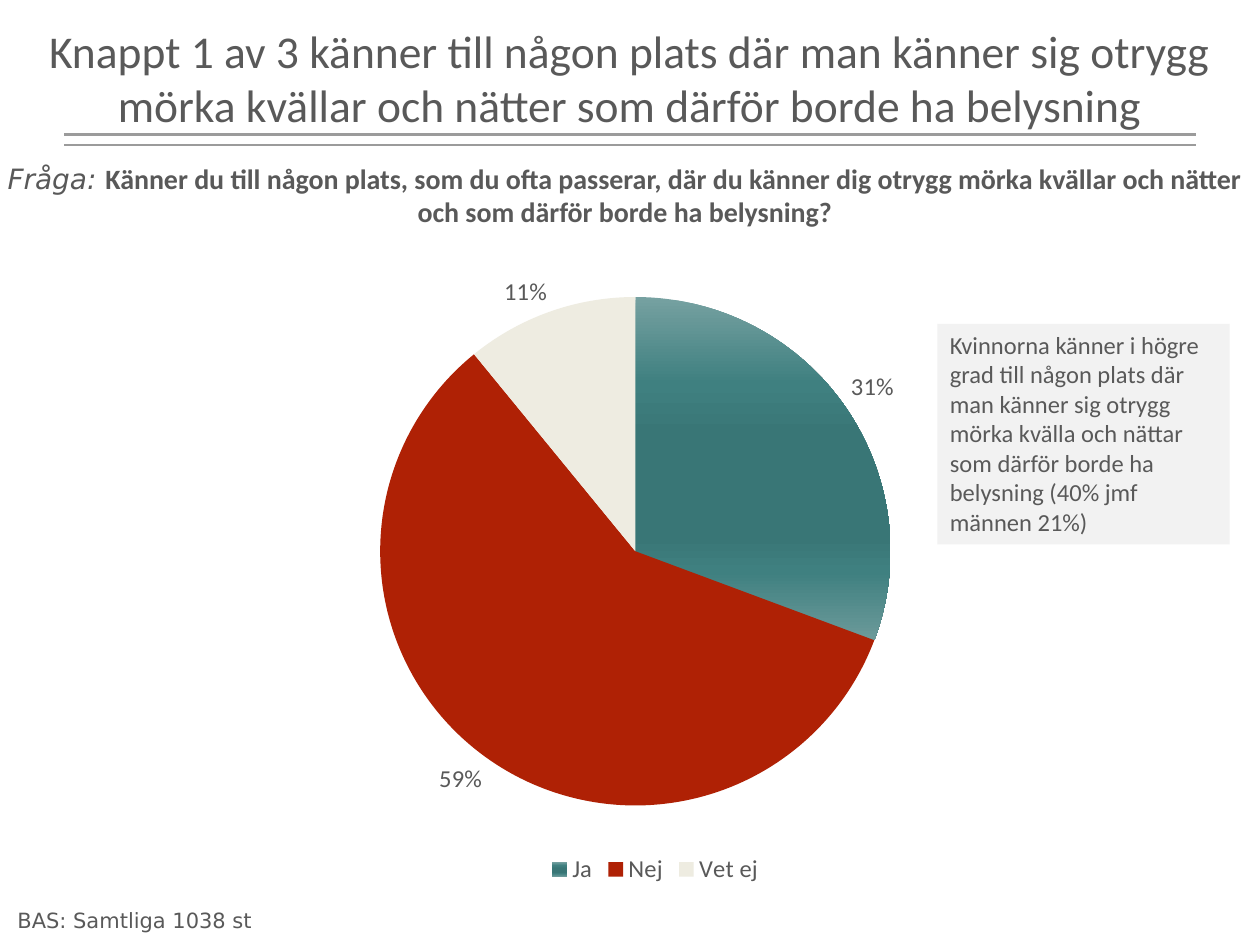
from lxml import etree
from pptx import Presentation
from pptx.chart.data import CategoryChartData
from pptx.dml.color import RGBColor
from pptx.enum.chart import XL_CHART_TYPE, XL_LABEL_POSITION, XL_LEGEND_POSITION
from pptx.enum.shapes import MSO_CONNECTOR, MSO_SHAPE
from pptx.enum.text import MSO_ANCHOR, MSO_AUTO_SIZE, PP_ALIGN
from pptx.oxml import parse_xml
from pptx.oxml.ns import nsdecls, qn
from pptx.util import Inches, Pt

PIE = XL_CHART_TYPE.PIE
OUTSIDE = XL_LABEL_POSITION.OUTSIDE_END
BOTTOM = XL_LEGEND_POSITION.BOTTOM
STRAIGHT = MSO_CONNECTOR.STRAIGHT
RECT = MSO_SHAPE.RECTANGLE
TOP = MSO_ANCHOR.TOP
NO_FIT = MSO_AUTO_SIZE.NONE
GROW = MSO_AUTO_SIZE.SHAPE_TO_FIT_TEXT
LEFT, CENTER = PP_ALIGN.LEFT, PP_ALIGN.CENTER

TEXT, RULE, PANEL = "595959", "9B9B9B", "F2F2F2"
BODY, SANS = "Calibri", "DejaVu Sans"
SLICES = [("Ja", 0.31, None), ("Nej", 0.59, "AF2105"), ("Vet ej", 0.11, "EEECE1")]
TEAL_STOPS = [(0, "76A1A1"), (25, "3F8080"), (40, "397676"),
              (70, "397676"), (80, "3F8080"), (100, "6C9A9A")]
PLOT = {"x": 0.174, "y": 0.033, "w": 0.609, "h": 0.83}


def rgb(value):
    """Turn a hex string into a colour."""
    return RGBColor.from_string(value)


def style_font(font, size, name=BODY, bold=False, italic=False):
    """Apply the slide's text colour and the given face to a font."""
    font.size, font.name, font.bold, font.italic = Pt(size), name, bold, italic
    font.color.rgb = rgb(TEXT)


def write_text(tf, runs, align=LEFT, fit=GROW):
    """Fill a text frame with one paragraph of formatted runs."""
    tf.word_wrap = True
    tf.auto_size = fit
    tf.vertical_anchor = TOP
    p = tf.paragraphs[0]
    p.alignment = align
    for text, style in runs:
        r = p.add_run()
        r.text = text
        style_font(r.font, **style)


def add_title(s, box, text):
    """Place the title in its placeholder."""
    sp = s.shapes.title
    sp.left, sp.top, sp.width, sp.height = box
    write_text(sp.text_frame, [(text, {"size": 26})], CENTER, NO_FIT)


def add_double_rule(s, left, top, width, gap):
    """Draw the two parallel lines under the title."""
    for y in (top, top + gap):
        line = s.shapes.add_connector(STRAIGHT, left, y, left + width, y)
        line.line.color.rgb = rgb(RULE)
        line.line.width = Pt(1.5)
        etree.SubElement(line._element.spPr, qn("a:effectLst"))


def add_text(s, box, runs, align=LEFT):
    """Place a wrapped text box."""
    sp = s.shapes.add_textbox(*box)
    write_text(sp.text_frame, runs, align)


def add_comment_panel(s, box, text):
    """Place the shaded comment beside the pie."""
    sp = s.shapes.add_shape(RECT, *box)
    sp.shadow.inherit = False
    sp.fill.solid()
    sp.fill.fore_color.rgb = rgb(PANEL)
    sp.line.fill.background()
    write_text(sp.text_frame, [(text, {"size": 14})])


def fill_gradient(fill, stops):
    """Give a fill a vertical gradient with the listed stops."""
    fill.gradient()
    fill.gradient_angle = 270
    gs_list = fill._fill._gradFill.find(qn("a:gsLst"))
    for gs in list(gs_list):
        gs_list.remove(gs)
    for percent, color in stops:
        gs = etree.SubElement(gs_list, qn("a:gs"), pos=str(percent * 1000))
        etree.SubElement(gs, qn("a:srgbClr"), val=color)


def set_plot_layout(chart, plot):
    """Fix the inner plot area as fractions of the chart."""
    area = chart._chartSpace.chart.plotArea
    for old in area.findall(qn("c:layout")):
        area.remove(old)
    sizes = "".join(f'<c:{key} val="{value}"/>' for key, value in plot.items())
    area.insert(0, parse_xml(
        f'<c:layout {nsdecls("c")}><c:manualLayout><c:layoutTarget val="inner"/>'
        f'<c:xMode val="edge"/><c:yMode val="edge"/>{sizes}'
        '</c:manualLayout></c:layout>'))


def add_pie(s, box):
    """Place the pie of answers with labels and legend."""
    data = CategoryChartData(number_format="0%")
    data.categories = [name for name, _, _ in SLICES]
    data.add_series("Series 1", [value for _, value, _ in SLICES])
    chart = s.shapes.add_chart(PIE, *box, data).chart
    chart.has_title = False
    style_font(chart.font, 18)
    chart.has_legend = True
    chart.legend.position = BOTTOM
    chart.legend.include_in_layout = False
    style_font(chart.legend.font, 14)
    chart.plots[0].vary_by_categories = True
    series = chart.plots[0].series[0]
    for i, (_, _, color) in enumerate(SLICES):
        fmt = series.points[i].format
        fmt.line.fill.background()
        if color:
            fmt.fill.solid()
            fmt.fill.fore_color.rgb = rgb(color)
        else:
            fill_gradient(fmt.fill, TEAL_STOPS)
    labels = series.data_labels
    labels.show_value = True
    labels.number_format = "0%"
    labels.number_format_is_linked = False
    labels.position = OUTSIDE
    style_font(labels.font, 14)
    set_plot_layout(chart, PLOT)


def inches(*lengths):
    """Convert a box of lengths to Inches."""
    return [Inches(length) for length in lengths]


def main():
    """Build and save the slide."""
    prs = Presentation()
    prs.slide_width, prs.slide_height = inches(10, 7.5)
    s = prs.slides.add_slide(prs.slide_layouts[5])
    add_double_rule(s, *inches(0.51, 1.07, 8.98, 0.08))
    add_title(s, inches(0, 0.13, 10, 1.25),
              "Knappt 1 av 3 känner till någon plats där man känner sig otrygg "
              "mörka kvällar och nätter som därför borde ha belysning")
    add_text(s, inches(-0.04, 1.23, 10, 0.64), [
        ("Fråga: ", {"size": 16, "name": SANS, "italic": True}),
        ("Känner du till någon plats, som du ofta passerar, där du känner dig "
         "otrygg mörka kvällar och nätter och som därför borde ha belysning?",
         {"size": 16, "bold": True})], CENTER)
    add_pie(s, inches(1.54, 2.18, 7.32, 4.88))
    add_comment_panel(s, inches(7.44, 2.57, 2.32, 1.75),
                      "Kvinnorna känner i högre grad till någon plats där man "
                      "känner sig otrygg mörka kvälla och nättar som därför "
                      "borde ha belysning (40% jmf männen 21%)")
    add_text(s, inches(0.04, 7.15, 8.98, 0.3),
             [("BAS: Samtliga 1038 st", {"size": 12, "name": SANS})])
    prs.save("out.pptx")


if __name__ == "__main__":
    main()
